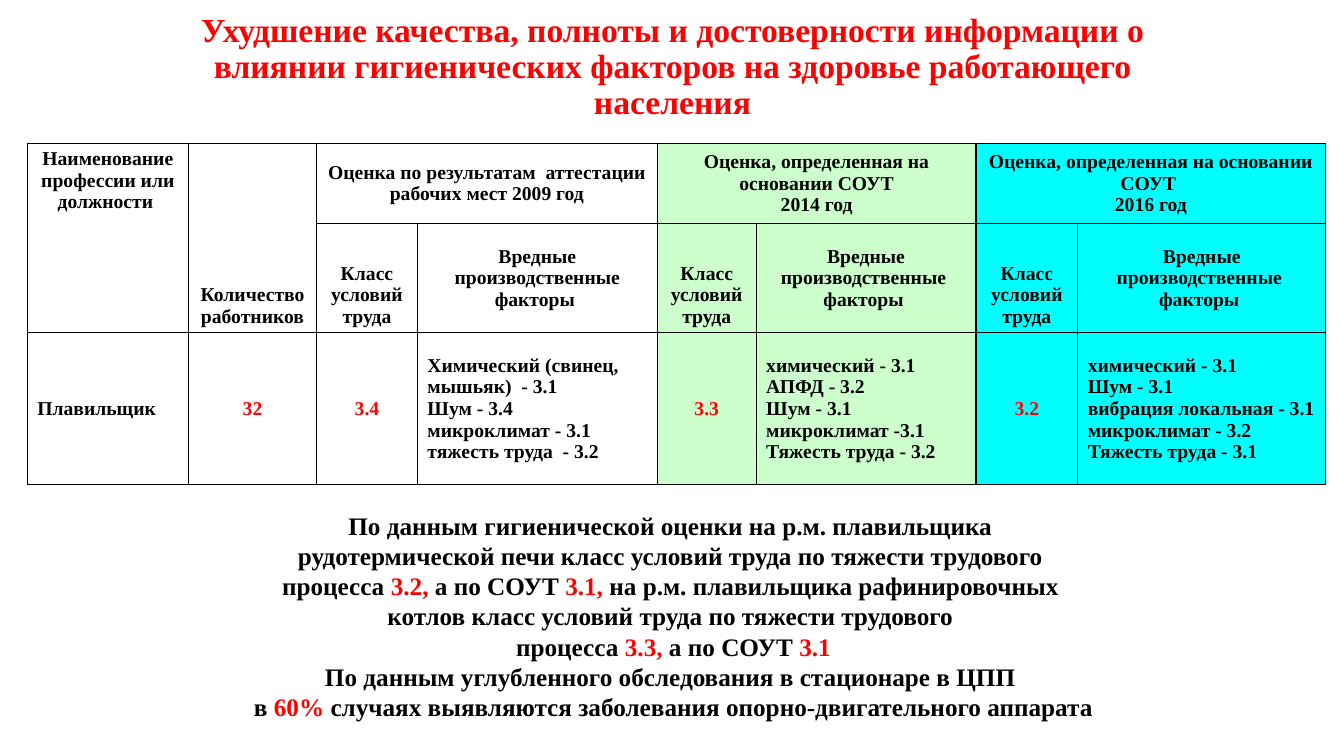
from lxml.etree import SubElement
from pptx import Presentation
from pptx.dml.color import RGBColor
from pptx.enum.shapes import MSO_SHAPE
from pptx.enum.text import MSO_ANCHOR, MSO_AUTO_SIZE, PP_ALIGN
from pptx.oxml.ns import qn
from pptx.util import Inches, Pt

BLACK = RGBColor(0x00, 0x00, 0x00)
WHITE = RGBColor(0xFF, 0xFF, 0xFF)
RED = RGBColor(0xFF, 0x00, 0x00)
GREEN = RGBColor(0xCC, 0xFF, 0xCC)
CYAN = RGBColor(0x00, 0xFF, 0xFF)
FONT = "Times New Roman"
TOP, MIDDLE, BOTTOM = MSO_ANCHOR.TOP, MSO_ANCHOR.MIDDLE, MSO_ANCHOR.BOTTOM

TITLE = ("Ухудшение качества, полноты и достоверности информации о влиянии "
         "гигиенических факторов на здоровье работающего населения")
COLUMN_WIDTHS = [1.6, 1.27, 1, 2.38, 0.98, 2.18, 1.01, 2.46]
ROW_HEIGHTS = [0.8, 1.08, 1.51]

# Each assessment: heading, fill, class of conditions, harmful factors
ASSESSMENTS = [
    ("Оценка по результатам  аттестации рабочих мест 2009 год", WHITE, "3.4",
     "Химический (свинец, мышьяк)  - 3.1\nШум - 3.4\n"
     "микроклимат - 3.1\nтяжесть труда  - 3.2"),
    ("Оценка, определенная на основании СОУТ\n2014 год", GREEN, "3.3",
     "химический - 3.1\nАПФД - 3.2\nШум - 3.1\n"
     "микроклимат -3.1\nТяжесть труда - 3.2"),
    ("Оценка, определенная на основании СОУТ \n2016 год", CYAN, "3.2",
     "химический - 3.1\nШум - 3.1\nвибрация локальная - 3.1\n"
     "микроклимат - 3.2\nТяжесть труда - 3.1"),
]

# Text between bars is red
CONCLUSIONS = [
    "По данным гигиенической оценки на р.м. плавильщика ",
    "рудотермической печи класс условий труда по тяжести трудового ",
    "процесса |3.2,| а по СОУТ |3.1, |на р.м. плавильщика рафинировочных ",
    "котлов класс условий труда по тяжести трудового ",
    "процесса |3.3, |а по СОУТ |3.1|",
    "По данным углубленного обследования в стационаре в ЦПП ",
    "в |60%| случаях выявляются заболевания опорно-двигательного аппарата",
]


def style(paragraph, size, color=BLACK, align=PP_ALIGN.CENTER):
    paragraph.alignment = align
    font = paragraph.font
    font.name, font.size, font.bold = FONT, Pt(size), True
    font.color.rgb = color


def place(shape, left, top, width, height):
    shape.left, shape.top = Inches(left), Inches(top)
    shape.width, shape.height = Inches(width), Inches(height)


def add_title(slide, *box):
    title = slide.shapes.title
    place(title, *box)
    frame = title.text_frame
    frame.text = TITLE
    frame.word_wrap = True
    frame.auto_size = MSO_AUTO_SIZE.NONE
    frame.vertical_anchor = MIDDLE
    style(frame.paragraphs[0], 24, RED)
    frame.paragraphs[0].line_spacing = 0.9


def format_cell(cell, fill):
    """Fill the cell and draw thin black borders on all four sides."""
    properties = cell._tc.get_or_add_tcPr()
    for side in ("lnL", "lnR", "lnT", "lnB"):
        line = SubElement(properties, qn(f"a:{side}"), w=str(Pt(1)))
        solid = SubElement(line, qn("a:solidFill"))
        SubElement(solid, qn("a:srgbClr"), val=str(BLACK))
    cell.fill.solid()
    cell.fill.fore_color.rgb = fill


def write_cell(cell, text, anchor=MIDDLE, color=BLACK, align=PP_ALIGN.CENTER):
    cell.text = text
    cell.vertical_anchor = anchor
    for paragraph in cell.text_frame.paragraphs:
        style(paragraph, 14, color, align)


def add_assessment_table(slide, left, top):
    frame = slide.shapes.add_table(
        len(ROW_HEIGHTS), len(COLUMN_WIDTHS), Inches(left), Inches(top),
        Inches(sum(COLUMN_WIDTHS)), Inches(sum(ROW_HEIGHTS)))
    table = frame.table
    for column, width in zip(table.columns, COLUMN_WIDTHS):
        column.width = Inches(width)
    for row, height in zip(table.rows, ROW_HEIGHTS):
        row.height = Inches(height)

    column_fills = [WHITE, WHITE]
    for _, fill, _, _ in ASSESSMENTS:
        column_fills += [fill, fill]
    for row in table.rows:
        for cell, fill in zip(row.cells, column_fills):
            format_cell(cell, fill)

    for column in (0, 1):
        table.cell(0, column).merge(table.cell(1, column))
    write_cell(table.cell(0, 0), "Наименование профессии или должности ", TOP)
    write_cell(table.cell(0, 1), "Количество работников", BOTTOM)
    write_cell(table.cell(2, 0), "Плавильщик", align=PP_ALIGN.LEFT)
    write_cell(table.cell(2, 1), "32", color=RED)

    for index, (heading, _, grade, factors) in enumerate(ASSESSMENTS):
        first = 2 + 2 * index
        second = first + 1
        table.cell(0, first).merge(table.cell(0, second))
        write_cell(table.cell(0, first), heading)
        write_cell(table.cell(1, first), "Класс условий труда", BOTTOM)
        gap = "  " if index else " "
        write_cell(table.cell(1, second),
                   f"Вредные производственные{gap}факторы ")
        write_cell(table.cell(2, first), grade, color=RED)
        write_cell(table.cell(2, second), factors, align=PP_ALIGN.LEFT)


def add_conclusions(slide, *box):
    shape = slide.shapes.add_shape(MSO_SHAPE.RECTANGLE, *map(Inches, box))
    shape.shadow.inherit = False
    shape.fill.solid()
    shape.fill.fore_color.rgb = WHITE
    shape.line.color.rgb = WHITE
    shape.line.width = Pt(0.75)
    frame = shape.text_frame
    frame.word_wrap = False
    frame.vertical_anchor = MIDDLE
    for index, text in enumerate(CONCLUSIONS):
        paragraph = frame.add_paragraph() if index else frame.paragraphs[0]
        style(paragraph, 18)
        for part, words in enumerate(text.split("|")):
            if words:
                run = paragraph.add_run()
                run.text = words
                run.font.color.rgb = RED if part % 2 else BLACK


def main():
    presentation = Presentation()
    presentation.slide_width = Inches(13.33)
    presentation.slide_height = Inches(7.5)
    slide = presentation.slides.add_slide(presentation.slide_layouts[5])
    add_assessment_table(slide, 0.27, 1.42)
    add_conclusions(slide, 0.35, 5.11, 12.66, 2)
    add_title(slide, 1.67, 0.28, 10, 0.78)
    presentation.save("out.pptx")


if __name__ == "__main__":
    main()
